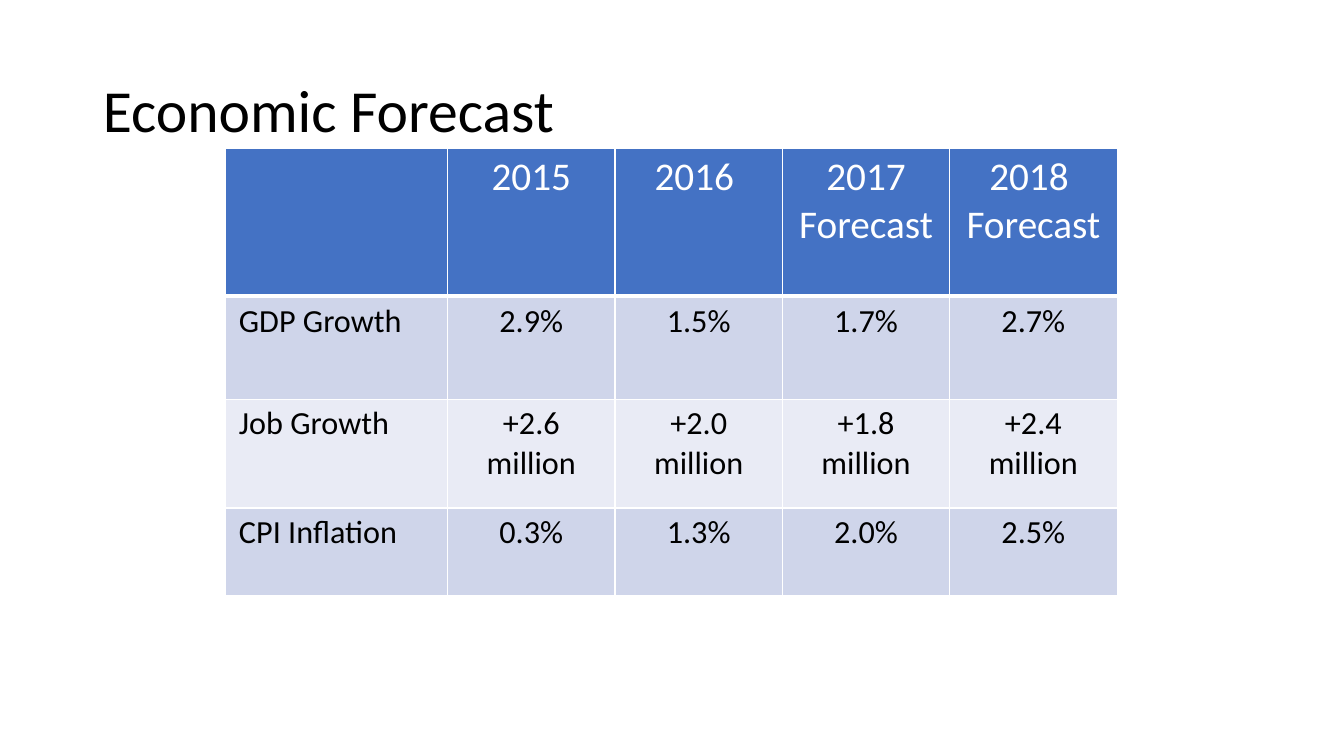
from lxml import etree
from pptx import Presentation
from pptx.dml.color import RGBColor
from pptx.enum.text import MSO_ANCHOR, PP_ALIGN
from pptx.oxml.ns import qn
from pptx.util import Inches, Pt

LEFT, CENTER = PP_ALIGN.LEFT, PP_ALIGN.CENTER
MIDDLE = MSO_ANCHOR.MIDDLE
FONT = "Calibri"
BLACK, WHITE, BLUE = "000000", "FFFFFF", "4472C4"
BANDS = ["E9EBF5", "CFD5EA"]
COLUMN_WIDTHS = [2.2] + [1.66] * 4
ROW_HEIGHTS = [1.47, 1.02, 1.08, 0.87]
FORECAST = [
    ["", "2015", "2016 ", "2017\nForecast", "2018 \nForecast"],
    ["GDP Growth", "2.9%", "1.5%", "1.7%", "2.7%"],
    ["Job Growth", "+2.6 million", "+2.0 million", "+1.8 million", "+2.4\nmillion"],
    ["CPI Inflation", "0.3%", "1.3%", "2.0%", "2.5%"],
]


def style_text(paragraph, size, color, align):
    paragraph.alignment = align
    for run in paragraph.runs:
        run.font.name = FONT
        run.font.size = Pt(size)
        run.font.color.rgb = RGBColor.from_string(color)


def add_borders(cell, widths):
    properties = cell._tc.get_or_add_tcPr()
    for position, (side, width) in enumerate(widths.items()):
        line = etree.Element(qn(f"a:ln{side}"), w=str(Pt(width)))
        fill = etree.SubElement(line, qn("a:solidFill"))
        etree.SubElement(fill, qn("a:srgbClr"), val=WHITE)
        properties.insert(position, line)


prs = Presentation()
prs.slide_width, prs.slide_height = Inches(13.33), Inches(7.5)
slide = prs.slides.add_slide(prs.slide_layouts[5])

heading = slide.shapes.title
heading.left, heading.top = Inches(0.92), Inches(0.4)
heading.width, heading.height = Inches(11.5), Inches(1.45)
heading.text_frame.text = "Economic Forecast"
heading.text_frame.vertical_anchor = MIDDLE
heading.text_frame.paragraphs[0].line_spacing = 0.9
style_text(heading.text_frame.paragraphs[0], 42.6, BLACK, LEFT)

forecast_table = slide.shapes.add_table(
    len(ROW_HEIGHTS), len(COLUMN_WIDTHS), Inches(2.24), Inches(1.47),
    Inches(sum(COLUMN_WIDTHS)), Inches(sum(ROW_HEIGHTS)),
).table
for column, width in zip(forecast_table.columns, COLUMN_WIDTHS):
    column.width = Inches(width)

for r, (row, height) in enumerate(zip(forecast_table.rows, ROW_HEIGHTS)):
    row.height = Inches(height)
    is_header = r == 0
    fill_color = BLUE if is_header else BANDS[r % 2]
    size, text_color = (28, WHITE) if is_header else (23, BLACK)
    borders = {"L": 1, "R": 1, "T": 3 if r == 1 else 1, "B": 3 if is_header else 1}
    for c, cell in enumerate(row.cells):
        cell.text_frame.text = FORECAST[r][c]
        cell.margin_left = cell.margin_right = Inches(0.13)
        cell.margin_top = cell.margin_bottom = Inches(0.05)
        cell.fill.solid()
        cell.fill.fore_color.rgb = RGBColor.from_string(fill_color)
        add_borders(cell, borders)
        for paragraph in cell.text_frame.paragraphs:
            style_text(paragraph, size, text_color, CENTER if c else LEFT)
            paragraph.font.bold = False
            for run in paragraph.runs:
                run.font.bold = False

prs.save("out.pptx")
